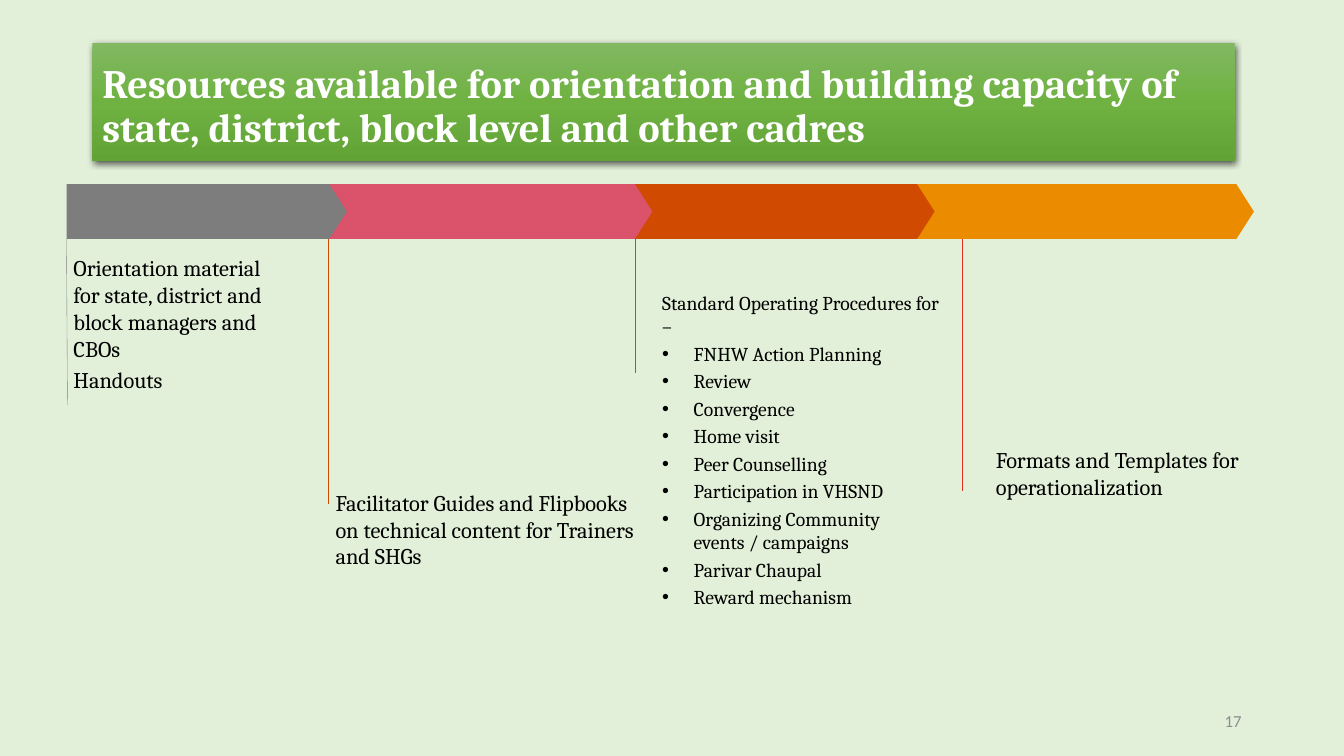
from dataclasses import dataclass

from lxml.etree import SubElement
from pptx import Presentation
from pptx.dml.color import RGBColor
from pptx.enum.shapes import MSO_CONNECTOR, MSO_SHAPE
from pptx.enum.text import MSO_ANCHOR, PP_ALIGN
from pptx.oxml import parse_xml
from pptx.oxml.ns import nsdecls, qn
from pptx.util import Pt


@dataclass(frozen=True)
class Theme:
    background: str = "E2F0D9"
    banner: tuple = ((0, "81B861"), (50, "6FB242"), (100, "62A336"))
    white: str = "FFFFFF"
    black: str = "000000"
    muted: str = "8C8C8C"
    gray: str = "7D7D7D"
    pink: str = "DB536A"
    rust: str = "D04A02"
    amber: str = "EB8C00"
    red: str = "E0301E"
    serif: str = "Cambria"
    sans: str = "Calibri"
    title_size: float = 28.8
    body_size: float = 16
    list_size: float = 14
    number_size: float = 12
    hairline: float = 0.25


def write_text(paragraph, text, *, size, font, color, bold=False, bullet=False,
               align=PP_ALIGN.LEFT, space_before=0, line_spacing=None):
    properties = paragraph._p.get_or_add_pPr()
    if bullet:
        indent = Pt(22.5)
        properties.set("marL", str(indent))
        properties.set("indent", str(-indent))
        SubElement(properties, qn("a:buFont")).set("typeface", "Arial")
        SubElement(properties, qn("a:buChar")).set("char", "•")
    paragraph.alignment = align
    paragraph.space_before = Pt(space_before)
    if line_spacing:
        paragraph.line_spacing = line_spacing
    run = paragraph.add_run()
    run.text = text
    run.font.size = Pt(size)
    run.font.name = font
    run.font.bold = bold
    run.font.color.rgb = RGBColor.from_string(color)


class SlideBuilder:
    def __init__(self, slide, theme):
        self.slide = slide
        self.theme = theme
        fill = slide.background.fill
        fill.solid()
        fill.fore_color.rgb = RGBColor.from_string(theme.background)

    def shape(self, kind, left, top, width, height, color=None, point=None):
        shape = self.slide.shapes.add_shape(
            kind, Pt(left), Pt(top), Pt(width), Pt(height))
        shape.shadow.inherit = False
        shape.line.fill.background()
        if color:
            shape.fill.solid()
            shape.fill.fore_color.rgb = RGBColor.from_string(color)
        if point:
            shape.adjustments[0] = point
        return shape

    def banner(self, left, top, width, height):
        shape = self.shape(MSO_SHAPE.RECTANGLE, left, top, width, height)
        shape.fill.gradient()
        shape.fill.gradient_angle = 270
        stops = shape._element.spPr.find(qn("a:gradFill")).find(qn("a:gsLst"))
        stops.clear()
        for position, color in self.theme.banner:
            stop = SubElement(stops, qn("a:gs"), pos=str(position * 1000))
            SubElement(stop, qn("a:srgbClr"), val=color)
        shape._element.spPr.find(qn("a:effectLst")).append(parse_xml(
            f'<a:outerShdw {nsdecls("a")} blurRad="{Pt(4.5)}" dist="{Pt(1.5)}" '
            f'dir="5400000" rotWithShape="0"><a:srgbClr val="{self.theme.black}">'
            '<a:alpha val="63000"/></a:srgbClr></a:outerShdw>'))

    def line(self, start, end, color):
        connector = self.slide.shapes.add_connector(
            MSO_CONNECTOR.STRAIGHT, *map(Pt, start + end))
        connector.line.width = Pt(self.theme.hairline)
        connector.line.color.rgb = RGBColor.from_string(color)
        SubElement(connector._element.spPr, qn("a:effectLst"))

    def text(self, left, top, width, height, lines, *, bullets_from=None,
             anchor=MSO_ANCHOR.BOTTOM, insets=(5, 0, 0, 0), gap=0, **style):
        box = self.slide.shapes.add_textbox(
            Pt(left), Pt(top), Pt(width), Pt(height))
        frame = box.text_frame
        frame.word_wrap = True
        frame.vertical_anchor = anchor
        (frame.margin_left, frame.margin_top,
         frame.margin_right, frame.margin_bottom) = map(Pt, insets)
        for index, line in enumerate(lines):
            paragraph = frame.add_paragraph() if index else frame.paragraphs[0]
            write_text(paragraph, line, space_before=gap if index else 0,
                       bullet=bullets_from is not None and index >= bullets_from,
                       **style)


def main():
    theme = Theme()
    presentation = Presentation()
    presentation.slide_width = Pt(960)
    presentation.slide_height = Pt(540)
    slide = presentation.slides.add_slide(presentation.slide_layouts[6])
    builder = SlideBuilder(slide, theme)
    framed = dict(anchor=MSO_ANCHOR.MIDDLE, insets=(7.2, 3.6, 7.2, 3.6))
    body = dict(size=theme.body_size, font=theme.serif, color=theme.black, gap=3.2)

    # Title banner
    builder.banner(66, 31, 816, 84)
    builder.text(66, 24.5, 830, 104.4,
                 ["Resources available for orientation and building capacity of "
                  "state, district, block level and other cadres"],
                 size=theme.title_size, font=theme.serif, color=theme.white,
                 bold=True, line_spacing=0.9, **framed)

    # Lines dropping from the arrow band
    band_top, band_height = 131.5, 39.2
    band_bottom = band_top + band_height
    for top_x, bottom_x, bottom, color in (
            (47.5, 48.2, 289.4, theme.gray),
            (234.7, 234.7, 360, theme.rust),
            (453.6, 453.6, 266.4, theme.rust),
            (687.6, 687.6, 350.6, theme.red)):
        builder.line((top_x, band_bottom), (bottom_x, bottom), color)

    # Arrow band, each part overlapping the one behind it
    for kind, left, width, color in (
            (MSO_SHAPE.CHEVRON, 223.2, 270.7, theme.pink),
            (MSO_SHAPE.PENTAGON, 47.5, 200.2, theme.gray),
            (MSO_SHAPE.CHEVRON, 453.6, 240.5, theme.rust),
            (MSO_SHAPE.CHEVRON, 655.2, 240.5, theme.amber)):
        builder.shape(kind, left, band_top, width, band_height, color, point=0.32)

    # Resource descriptions
    builder.text(47.5, 239.8, 157.7, 41,
                 ["Orientation material for state, district and block managers "
                  "and CBOs", "Handouts"], **body)
    builder.text(234.7, 346.3, 233.3, 60.5,
                 ["Facilitator Guides and Flipbooks on technical content for "
                  "Trainers and SHGs"], **body)
    builder.text(706.3, 330.5, 183.6, 26.6,
                 ["Formats and Templates for operationalization"], **body)

    # Standard operating procedures
    builder.text(468, 239.8, 209.5, 214.5,
                 ["Standard Operating Procedures for –", "FNHW Action Planning",
                  "Review", "Convergence", "Home visit", "Peer Counselling",
                  "Participation in VHSND",
                  "Organizing Community events / campaigns",
                  "Parivar Chaupal", "Reward mechanism"],
                 bullets_from=1, insets=(5, 0, 0, 19.6), gap=2.8,
                 size=theme.list_size, font=theme.serif, color=theme.black)

    # Slide number
    builder.text(678, 500.4, 216, 28.8, ["17"], size=theme.number_size,
                 font=theme.sans, color=theme.muted, align=PP_ALIGN.RIGHT, **framed)

    presentation.save("out.pptx")


if __name__ == "__main__":
    main()
